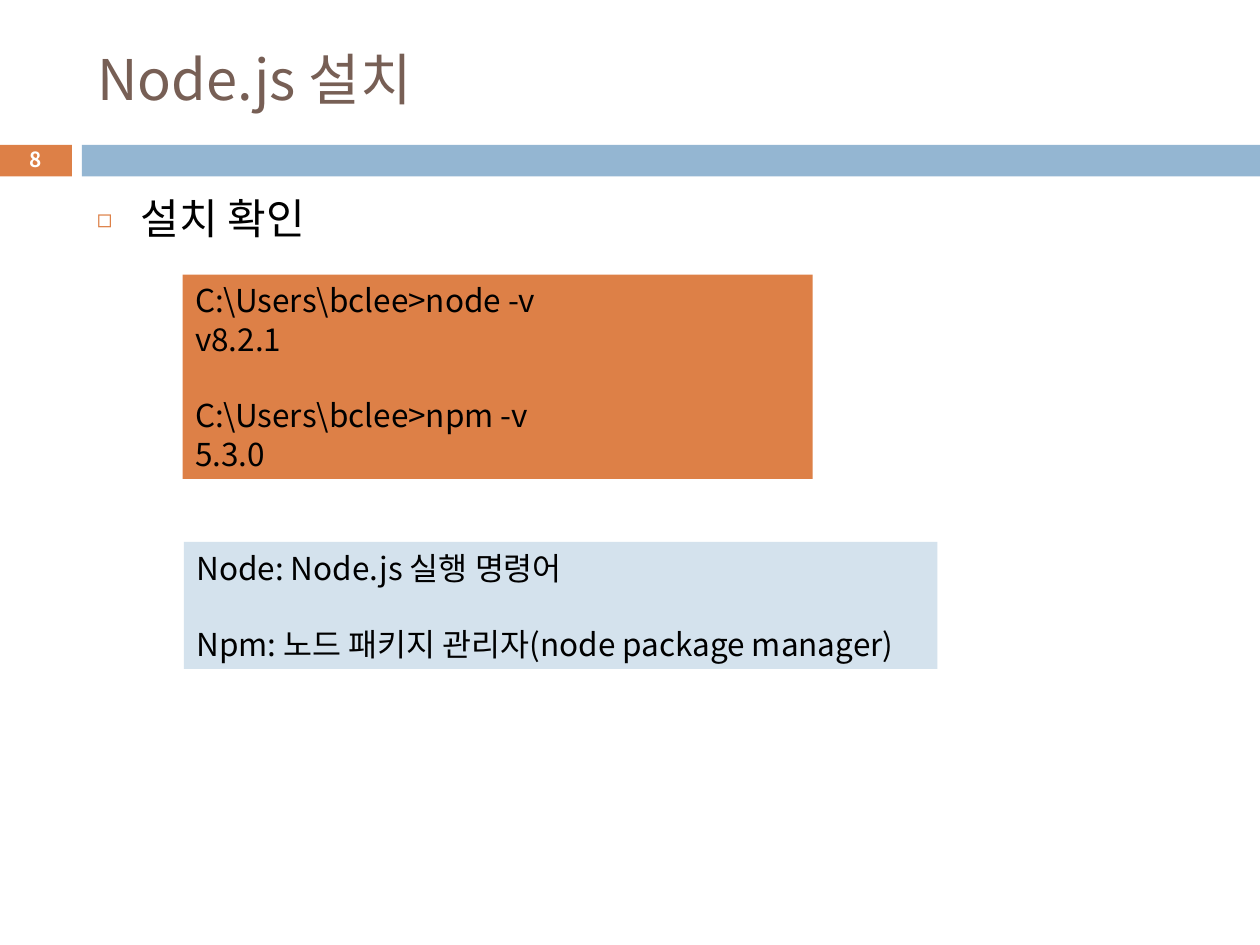
from dataclasses import dataclass

from lxml.etree import SubElement
from pptx import Presentation
from pptx.dml.color import RGBColor
from pptx.enum.shapes import MSO_SHAPE
from pptx.enum.text import MSO_ANCHOR, PP_ALIGN
from pptx.oxml.ns import qn
from pptx.util import Inches, Pt


@dataclass(frozen=True)
class Theme:
    font: str = "Noto Sans CJK KR"
    orange: str = "DD8047"
    blue: str = "94B6D2"
    pale_blue: str = "D4E2ED"
    brown: str = "775F55"
    black: str = "000000"
    white: str = "FFFFFF"
    title_size: float = 32
    body_size: float = 24
    box_size: float = 18
    number_size: float = 11.9
    leading: float = 1.217


@dataclass(frozen=True)
class Area:
    """A rectangle given as shares of the slide's width and height."""
    left: float
    top: float
    width: float
    height: float


@dataclass(frozen=True)
class Panel:
    area: Area
    fill: str
    groups: tuple[tuple[str, ...], ...] = ()
    wrap: bool = True


THEME = Theme()
WIDTH, HEIGHT = Inches(10), Inches(7.5)
MARGIN, CONTENT_WIDTH = 0.067, 0.892
BAND_TOP, BAND_HEIGHT = 1.15 / 7.5, 0.25 / 7.5

TITLE_AREA = Area(MARGIN, 0.25 / 7.5, CONTENT_WIDTH, 0.74 / 7.5)
BODY_AREA = Area(MARGIN, 1.47 / 7.5, CONTENT_WIDTH, 5.51 / 7.5)
NUMBER_AREA = Area(-0.001, 1.13 / 7.5, 0.058, 0.27 / 7.5)

BANDS = (
    Panel(Area(-0.001, BAND_TOP, 0.058, BAND_HEIGHT), THEME.orange),
    Panel(Area(0.065, BAND_TOP, 0.935, BAND_HEIGHT), THEME.blue),
)
BOXES = (
    Panel(
        Area(0.145, 2.18 / 7.5, 0.5, 1.62 / 7.5),
        THEME.orange,
        (("C:\\Users\\bclee>node -v", "v8.2.1"), ("C:\\Users\\bclee>npm -v", "5.3.0")),
    ),
    Panel(
        Area(0.146, 4.3 / 7.5, 0.598, 1.01 / 7.5),
        THEME.pale_blue,
        (("Node: Node.js 실행 명령어",), ("Npm: 노드 패키지 관리자(node package manager)",)),
        wrap=False,
    ),
)


def frame(area: Area) -> tuple[int, int, int, int]:
    return (
        round(area.left * WIDTH),
        round(area.top * HEIGHT),
        round(area.width * WIDTH),
        round(area.height * HEIGHT),
    )


def apply_format(target, values: dict) -> None:
    for name, value in values.items():
        setattr(target, name, value)


def write(para, text: str, size: float, color: str, bold: bool = False,
          align: PP_ALIGN = PP_ALIGN.LEFT) -> None:
    para.alignment = align
    span = para.add_run()
    span.text = text
    apply_format(span.font, {"name": THEME.font, "size": Pt(size), "bold": bold})
    span.font.color.rgb = RGBColor.from_string(color)
    east_asian = SubElement(span.font._element, qn("a:ea"))
    east_asian.set("typeface", THEME.font)


def add_bullet(para) -> None:
    """Give the paragraph a hanging orange square at 60 % of the text size."""
    properties = para._p.get_or_add_pPr()
    properties.set("marL", str(Inches(0.35)))
    properties.set("indent", str(-Inches(0.35)))
    color = SubElement(properties, qn("a:buClr"))
    SubElement(color, qn("a:srgbClr")).set("val", THEME.orange)
    SubElement(properties, qn("a:buSzPct")).set("val", "60000")
    SubElement(properties, qn("a:buFont")).set("typeface", THEME.font)
    SubElement(properties, qn("a:buChar")).set("char", "◻")


def add_panel(page, panel: Panel) -> None:
    """Draw a plain rectangle; each later group of lines starts one line lower."""
    box = page.shapes.add_shape(MSO_SHAPE.RECTANGLE, *frame(panel.area))
    box.shadow.inherit = False
    box.fill.solid()
    box.fill.fore_color.rgb = RGBColor.from_string(panel.fill)
    box.line.fill.background()
    text = box.text_frame
    apply_format(text, {"word_wrap": panel.wrap, "vertical_anchor": MSO_ANCHOR.TOP})
    line_height = Pt(THEME.box_size * THEME.leading)
    for group_index, group in enumerate(panel.groups):
        for line_index, line in enumerate(group):
            first = group_index == line_index == 0
            para = text.paragraphs[0] if first else text.add_paragraph()
            starts_group = group_index > 0 and line_index == 0
            apply_format(para, {
                "line_spacing": line_height,
                "space_before": line_height if starts_group else Pt(0),
            })
            write(para, line, THEME.box_size, THEME.black)


def add_title(page, text: str) -> None:
    title = page.shapes.title
    names = ("left", "top", "width", "height")
    apply_format(title, dict(zip(names, frame(TITLE_AREA))))
    title.text_frame.vertical_anchor = MSO_ANCHOR.MIDDLE
    write(title.text_frame.paragraphs[0], text, THEME.title_size, THEME.brown)


def add_text_box(page, area: Area, anchor: MSO_ANCHOR):
    """Add a wrapping text box and return its first paragraph."""
    box = page.shapes.add_textbox(*frame(area))
    apply_format(box.text_frame, {"word_wrap": True, "vertical_anchor": anchor})
    return box.text_frame.paragraphs[0]


def main() -> None:
    deck = Presentation()
    apply_format(deck, {"slide_width": WIDTH, "slide_height": HEIGHT})
    page = deck.slides.add_slide(deck.slide_layouts.get_by_name("Title Only"))

    for band in BANDS:
        add_panel(page, band)
    add_title(page, "Node.js 설치")

    body = add_text_box(page, BODY_AREA, MSO_ANCHOR.TOP)
    body.line_spacing = Pt(THEME.body_size * THEME.leading)
    write(body, "설치 확인", THEME.body_size, THEME.black)
    add_bullet(body)

    number = add_text_box(page, NUMBER_AREA, MSO_ANCHOR.MIDDLE)
    write(number, "8", THEME.number_size, THEME.white, bold=True, align=PP_ALIGN.CENTER)

    for box in BOXES:
        add_panel(page, box)
    deck.save("out.pptx")


if __name__ == "__main__":
    main()
